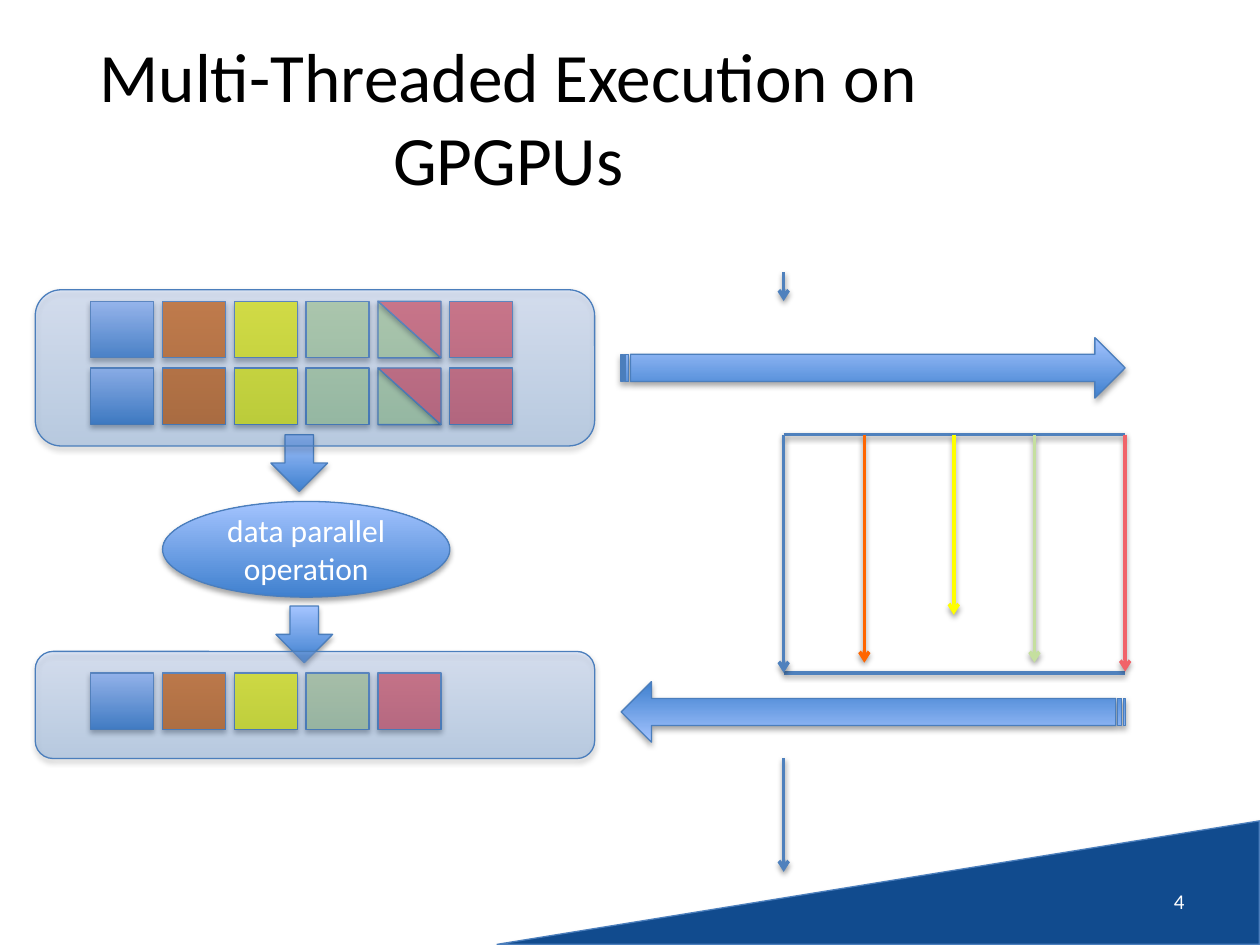
from lxml.etree import SubElement
from pptx import Presentation
from pptx.dml.color import RGBColor
from pptx.enum.shapes import MSO_CONNECTOR as Connector, MSO_SHAPE as Shape
from pptx.enum.text import MSO_ANCHOR as Anchor, MSO_AUTO_SIZE as AutoSize, PP_ALIGN as Align
from pptx.oxml.ns import qn
from pptx.util import Inches, Pt

TITLE = "Multi-Threaded Execution on GPGPUs"
OPERATION = "data parallel operation"
PAGE_NUMBER = "4"

NAVY, OUTLINE, BLUE = "114B8E", "4B7EBC", "4F81BD"
ORANGE, YELLOW, GREEN, PINK = "E46C0A", "FFFF00", "C5DF9F", "F16369"
GRADIENT = ("3F80CE", "A4C4FF")
SPLIT = (GREEN, PINK)

INPUT = [GRADIENT, ORANGE, YELLOW, GREEN, SPLIT, PINK]
OUTPUT = [GRADIENT, ORANGE, YELLOW, "C3D69B", PINK]
DATA_ROWS = [(5.34, OUTPUT), (2.39, INPUT), (2.92, INPUT)]
CELL_LEFT, CELL_PITCH, CELL_WIDTH, CELL_HEIGHT = 0.72, 0.57, 0.5, 0.45

FORK, JOIN = 3.45, 5.34
MAIN_X, LAST_X = 6.22, 8.93
THREADS = [(MAIN_X, JOIN, BLUE), (6.86, 5.26, "FF6600"), (7.57, 4.88, YELLOW),
           (8.21, 5.26, GREEN), (LAST_X, 5.33, PINK)]
SERIAL_STEPS = [(2.16, 2.39), (6.02, 6.92)]
DOWN_ARROWS = [(2.15, 3.45), (2.19, 4.81)]
TRANSFERS = [(2.68, 0), (5.41, 180)]
PANELS = [(2.3, 1.24), (5.17, 0.85)]


def color(value):
    return RGBColor.from_string(value)


def add_shadow(item, alpha, distance):
    effects = SubElement(item._element.spPr, qn("a:effectLst"))
    shadow = SubElement(effects, qn("a:outerShdw"), blurRad="40000", dist=str(distance),
                        dir="5400000", rotWithShape="0")
    black = SubElement(shadow, qn("a:srgbClr"), val="000000")
    SubElement(black, qn("a:alpha"), val=str(alpha * 1000))


def add_figure(kind, left, top, width, height, fill=GRADIENT, rotation=0, opacity=100):
    figure = page.shapes.add_shape(kind, *map(Inches, (left, top, width, height)))
    figure.rotation = rotation
    if isinstance(fill, str):
        figure.fill.solid()
        figure.fill.fore_color.rgb = color(fill)
    else:
        figure.fill.gradient()
        figure.fill.gradient_angle = 90
        for stop, shade in zip(figure.fill.gradient_stops, fill):
            stop.color.rgb = color(shade)
        if opacity < 100:
            for tint in figure._element.spPr.iter(qn("a:srgbClr")):
                SubElement(tint, qn("a:alpha"), val=str(opacity * 1000))
    figure.line.color.rgb = color(OUTLINE)
    figure.line.width = Pt(0.75)
    add_shadow(figure, 35, 23000)
    return figure


def add_line(start, end, shade=BLUE, arrow=True):
    line = page.shapes.add_connector(Connector.STRAIGHT, *map(Inches, start + end))
    line.line.color.rgb = color(shade)
    line.line.width = Pt(2)
    if arrow:
        SubElement(line.line._get_or_add_ln(), qn("a:tailEnd"), type="arrow")
    add_shadow(line, 38, 20000)


def write(box, text, size, shade, align):
    frame = box.text_frame
    frame.text = text
    frame.word_wrap = True
    frame.auto_size = AutoSize.NONE
    frame.vertical_anchor = Anchor.MIDDLE
    para = frame.paragraphs[0]
    para.alignment = align
    para.font.name = "Calibri"
    para.font.size = Pt(size)
    para.font.color.rgb = color(shade)


deck = Presentation()
deck.slide_width, deck.slide_height = Inches(10), Inches(7.5)
page = deck.slides.add_slide(deck.slide_layouts[5])

title = page.shapes.title
title.left, title.top, title.width, title.height = map(Inches, (0.5, 0.3, 7.07, 1.25))
write(title, TITLE, 39.6, "000000", Align.CENTER)

add_figure(Shape.RIGHT_TRIANGLE, 6.48, 3.98, 0.98, 6.05, NAVY, 270)

for top, fills in DATA_ROWS:
    for column, fill in enumerate(fills):
        place = (CELL_LEFT + column * CELL_PITCH, top, CELL_WIDTH, CELL_HEIGHT)
        if fill is SPLIT:
            for half, rotation in zip(SPLIT, (0, 180)):
                add_figure(Shape.RIGHT_TRIANGLE, *place, half, rotation)
        else:
            add_figure(Shape.RECTANGLE, *place, fill)

operation = add_figure(Shape.OVAL, 1.29, 3.98, 2.28, 0.76)
write(operation, OPERATION, 18, "FFFFFF", Align.CENTER)
for left, top in DOWN_ARROWS:
    add_figure(Shape.DOWN_ARROW, left, top, 0.45, 0.45)

for top, bottom in SERIAL_STEPS:
    add_line((MAIN_X, top), (MAIN_X, bottom))
for level in (FORK, JOIN):
    add_line((MAIN_X, level), (LAST_X, level), arrow=False)
for x, bottom, shade in THREADS:
    add_line((x, FORK), (x, bottom), shade)

for top, rotation in TRANSFERS:
    transfer = add_figure(Shape.STRIPED_RIGHT_ARROW, 4.93, top, 4, 0.48, rotation=rotation)
    transfer.adjustments[0] = 0.448
    transfer.adjustments[1] = 0.5

for top, height in PANELS:
    add_figure(Shape.ROUNDED_RECTANGLE, 0.28, top, 4.44, height, opacity=28)

number = page.shapes.add_textbox(*map(Inches, (7.17, 6.95, 2.33, 0.4)))
write(number, PAGE_NUMBER, 12, "FFFFFF", Align.RIGHT)

deck.save("out.pptx")
